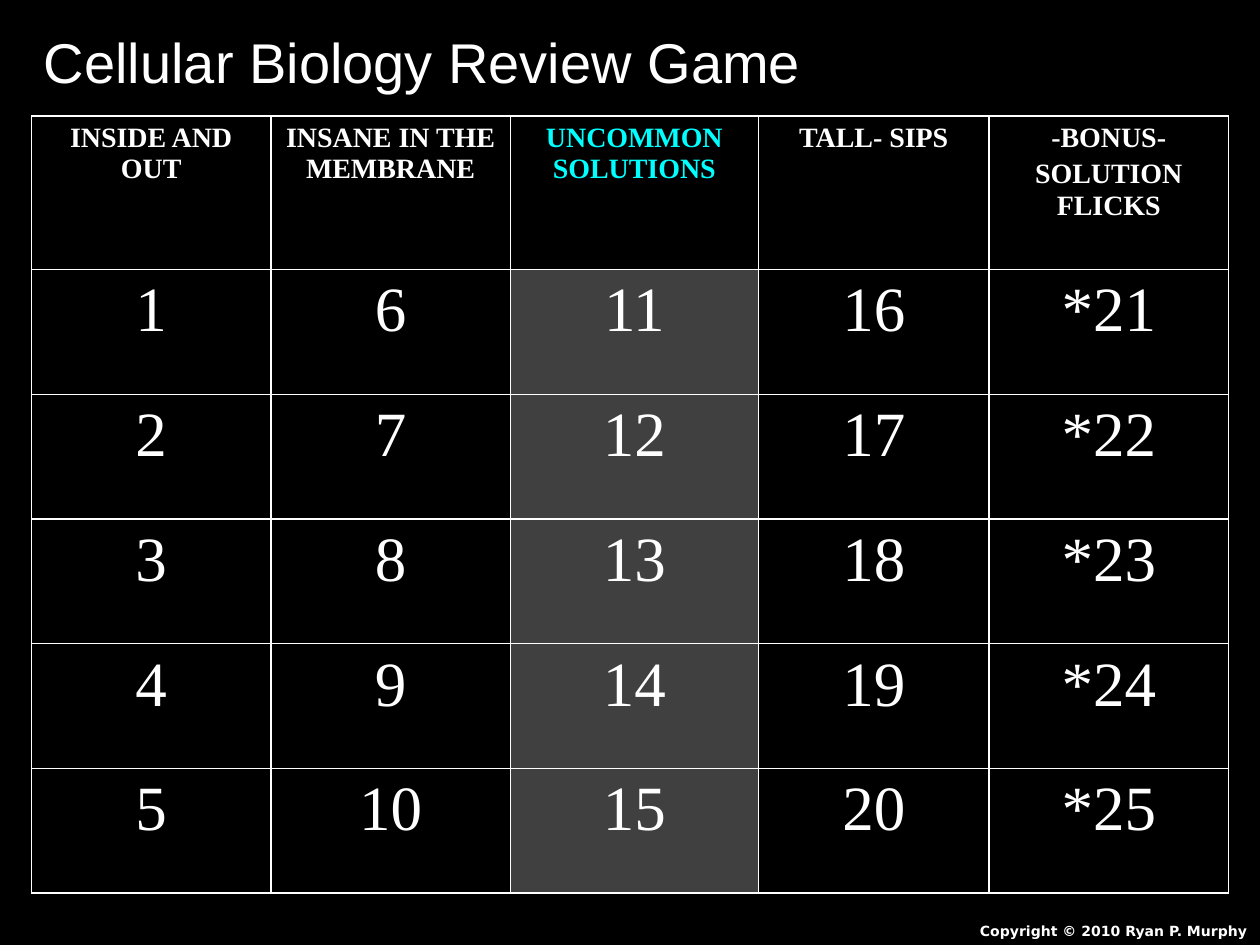
from lxml.etree import SubElement
from pptx import Presentation
from pptx.dml.color import RGBColor
from pptx.enum.text import PP_ALIGN
from pptx.oxml.ns import qn
from pptx.util import Inches, Pt

TITLE = "Cellular Biology Review Game"
CREDIT = "Copyright © 2010 Ryan P. Murphy"
CATEGORIES = [
    "INSIDE AND\vOUT",
    "INSANE IN THE MEMBRANE",
    "UNCOMMON SOLUTIONS",
    "TALL- SIPS",
    "-BONUS-\nSOLUTION FLICKS",
]
QUESTIONS_EACH = 5
BONUS_COLUMN = 4
ACTIVE_COLUMN = 2
COLUMN_WIDTHS = [1.9, 1.9, 1.97, 1.83, 1.9]
HEADER_HEIGHT, QUESTION_HEIGHT = 1.22, 0.99
BLACK, WHITE, CYAN, GRAY = "000000", "FFFFFF", "00FFFF", "404040"


def color(value):
    return RGBColor.from_string(value)


def style(paragraph, font, size, tint=WHITE, bold=False, align=PP_ALIGN.LEFT):
    paragraph.alignment = align
    paragraph.font.name = font
    paragraph.font.size = Pt(size)
    paragraph.font.bold = bold
    paragraph.font.color.rgb = color(tint)


def add_text(page, area, text, *look, **options):
    box = page.shapes.add_textbox(*map(Inches, area))
    box.text_frame.word_wrap = True
    box.text_frame.text = text
    style(box.text_frame.paragraphs[0], *look, **options)


def add_borders(cell):
    properties = cell._tc.get_or_add_tcPr()
    for index, side in enumerate(("lnL", "lnR", "lnT", "lnB")):
        line = properties.makeelement(qn(f"a:{side}"), {"w": str(Pt(1))})
        fill = SubElement(line, qn("a:solidFill"))
        SubElement(fill, qn("a:srgbClr"), val=WHITE)
        properties.insert(index, line)


def fill_cell(cell, text, size, tint, bold, shade):
    cell.text = text
    for paragraph in cell.text_frame.paragraphs:
        style(paragraph, "Times New Roman", size, tint, bold, PP_ALIGN.CENTER)
        paragraph.space_before = Pt(size * 0.2)
    if shade:
        cell.fill.solid()
        cell.fill.fore_color.rgb = color(shade)
    else:
        cell.fill.background()
    add_borders(cell)


def add_board(page):
    heights = [HEADER_HEIGHT] + [QUESTION_HEIGHT] * QUESTIONS_EACH
    area = (0.25, 0.92, sum(COLUMN_WIDTHS), sum(heights))
    board = page.shapes.add_table(
        len(heights), len(CATEGORIES), *map(Inches, area)).table
    board.first_row = board.horz_banding = False
    for row, height in zip(board.rows, heights):
        row.height = Inches(height)
    for column, (category, width) in enumerate(zip(CATEGORIES, COLUMN_WIDTHS)):
        board.columns[column].width = Inches(width)
        active = column == ACTIVE_COLUMN
        fill_cell(board.cell(0, column), category, 16,
                  CYAN if active else WHITE, True, None)
        mark = "*" if column == BONUS_COLUMN else ""
        for row in range(1, QUESTIONS_EACH + 1):
            number = column * QUESTIONS_EACH + row
            fill_cell(board.cell(row, column), f"{mark}{number}", 36,
                      WHITE, False, GRAY if active else None)


def main():
    deck = Presentation()
    deck.slide_width, deck.slide_height = Inches(10), Inches(7.5)
    page = deck.slides.add_slide(deck.slide_layouts[6])
    page.background.fill.solid()
    page.background.fill.fore_color.rgb = color(BLACK)
    add_board(page)
    add_text(page, (7.08, 7.27, 2.92, 0.23), CREDIT, "DejaVu Sans", 8,
             bold=True, align=PP_ALIGN.RIGHT)
    add_text(page, (0.25, 0.17, 9.75, 0.63), TITLE, "Arial", 32)
    deck.save("out.pptx")


if __name__ == "__main__":
    main()
